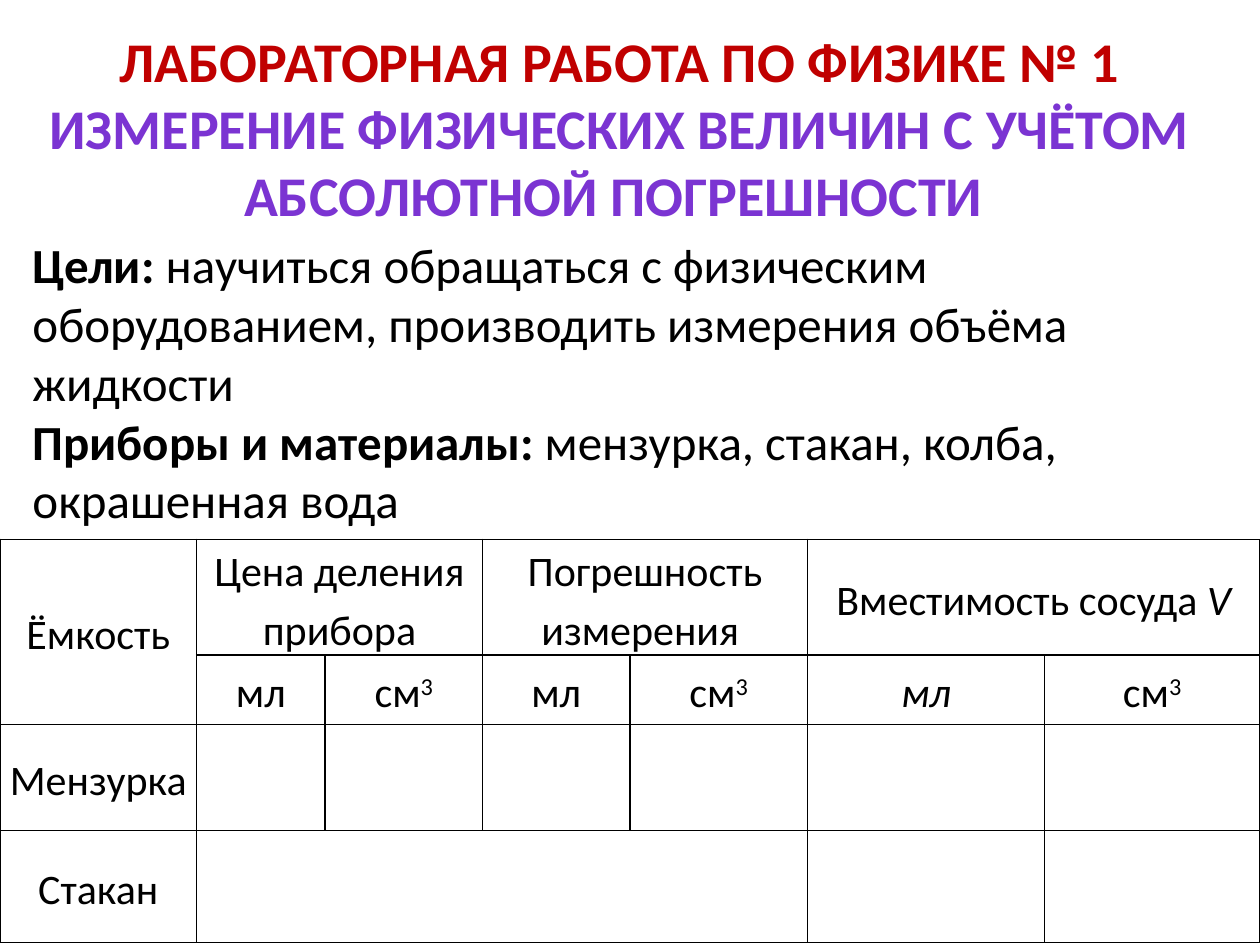
import pptx
import pptx.dml.color
import pptx.enum.text
import pptx.oxml
import pptx.oxml.ns
import pptx.util
from pptx.util import Inches

NS = pptx.oxml.ns.nsdecls("a")
CENTER = pptx.enum.text.PP_ALIGN.CENTER
MIDDLE = pptx.enum.text.MSO_ANCHOR.MIDDLE


def add_run(paragraph, text, size, color="000000", bold=False):
    run = paragraph.add_run()
    run.text = text
    run.font.name = "Calibri"
    run.font.size = pptx.util.Pt(size)
    run.font.bold = bold
    run.font.color.rgb = pptx.dml.color.RGBColor.from_string(color)
    return run


def add_text_frame(left, top, width, height):
    box = slide.shapes.add_textbox(Inches(left), Inches(top), Inches(width), Inches(height))
    box.text_frame.word_wrap = True
    box.text_frame.auto_size = pptx.enum.text.MSO_AUTO_SIZE.SHAPE_TO_FIT_TEXT
    return box.text_frame


prs = pptx.Presentation()
prs.slide_width, prs.slide_height = Inches(10), Inches(7.5)
slide = prs.slides.add_slide(prs.slide_layouts[6])

# Goals and equipment
intro = add_text_frame(0.16, 1.8, 9.84, 2.46)
intro.vertical_anchor = MIDDLE
goals = intro.paragraphs[0]
add_run(goals, "Цели:", 28, bold=True)
add_run(goals, " научиться обращаться с физическим оборудованием, "
               "производить измерения объёма жидкости", 28)
equipment = intro.add_paragraph()
add_run(equipment, "Приборы и материалы:", 28, bold=True)
add_run(equipment, " мензурка, стакан, колба, окрашенная вода", 28)

# Heading, outlined; the topic line has a gradient fill
heading = add_text_frame(0.23, 0.16, 9.38, 1.72)
work_number = heading.paragraphs[0]
topic = heading.add_paragraph()
add_run(work_number, "ЛАБОРАТОРНАЯ РАБОТА ПО ФИЗИКЕ № 1", 32, "C00000", True)
topic_run = add_run(topic, "ИЗМЕРЕНИЕ ФИЗИЧЕСКИХ ВЕЛИЧИН С УЧЁТОМ АБСОЛЮТНОЙ ПОГРЕШНОСТИ ",
                    32, "7B34D2", True)
stops = "".join(
    f'<a:gs pos="{percent * 1000}"><a:srgbClr val="{color}"/></a:gs>'
    for percent, color in [(0, "3D1B67"), (43, "7B34D2"), (48, "7330C4"), (100, "3D1B67")])
gradient = pptx.oxml.parse_xml(
    f'<a:gradFill {NS}><a:gsLst>{stops}</a:gsLst><a:lin ang="5400000" scaled="0"/></a:gradFill>')
topic_props = topic_run.font._element
topic_props.replace(topic_props.find(pptx.oxml.ns.qn("a:solidFill")), gradient)
for line in (work_number, topic):
    line.alignment = CENTER
    line.runs[0].font._element.insert(0, pptx.oxml.parse_xml(
        f'<a:ln {NS} w="9017"><a:solidFill><a:srgbClr val="5E457C"/></a:solidFill></a:ln>'))

# Measurement table
column_widths = [1.56, 1.02, 1.25, 1.17, 1.41, 1.88, 1.71]
row_heights = [0.92, 0.55, 0.84, 0.89]
frame = slide.shapes.add_table(len(row_heights), len(column_widths),
                               Inches(0), Inches(4.28), Inches(10), Inches(3.2))
table = frame.table
table.first_row = table.horz_banding = False
for column, width in zip(table.columns, column_widths):
    column.width = Inches(width)
for row, height in zip(table.rows, row_heights):
    row.height = Inches(height)

for cell in table.iter_cells():
    cell.fill.background()
    cell.vertical_anchor = MIDDLE
    cell.margin_left = cell.margin_right = Inches(0.07)
    cell.margin_top = cell.margin_bottom = 0
    cell_props = cell._tc.get_or_add_tcPr()
    for position, side in enumerate("LRTB"):
        cell_props.insert(position, pptx.oxml.parse_xml(
            f'<a:ln{side} {NS} w="12700"><a:solidFill><a:srgbClr val="000000"/></a:solidFill>'
            f'</a:ln{side}>'))

for top, left, bottom, right in [(0, 0, 1, 0), (0, 1, 0, 2), (0, 3, 0, 4),
                                 (0, 5, 0, 6), (3, 1, 3, 4)]:
    table.cell(top, left).merge(table.cell(bottom, right))

# Each label: plain text, italic text, superscript
labels = {
    (0, 0): ("Ёмкость", "", ""),
    (0, 1): ("Цена деления прибора", "", ""),
    (0, 3): ("Погрешность измерения ", "", ""),
    (0, 5): ("Вместимость сосуда ", "V", ""),
    (1, 1): ("мл", "", ""),
    (1, 3): ("мл", "", ""),
    (1, 5): ("", "мл", ""),
    (2, 0): ("Мензурка", "", ""),
    (3, 0): ("Стакан", "", ""),
}
for column in (2, 4, 6):
    labels[1, column] = ("см", "", "3")

for (row, column), (plain, italic, superscript) in labels.items():
    paragraph = table.cell(row, column).text_frame.paragraphs[0]
    paragraph.alignment = CENTER
    paragraph.line_spacing = 1.15
    if plain:
        add_run(paragraph, plain, 24)
    if italic:
        add_run(paragraph, italic, 24).font.italic = True
    if superscript:
        add_run(paragraph, superscript, 24).font._element.set("baseline", "30000")

prs.save("out.pptx")
